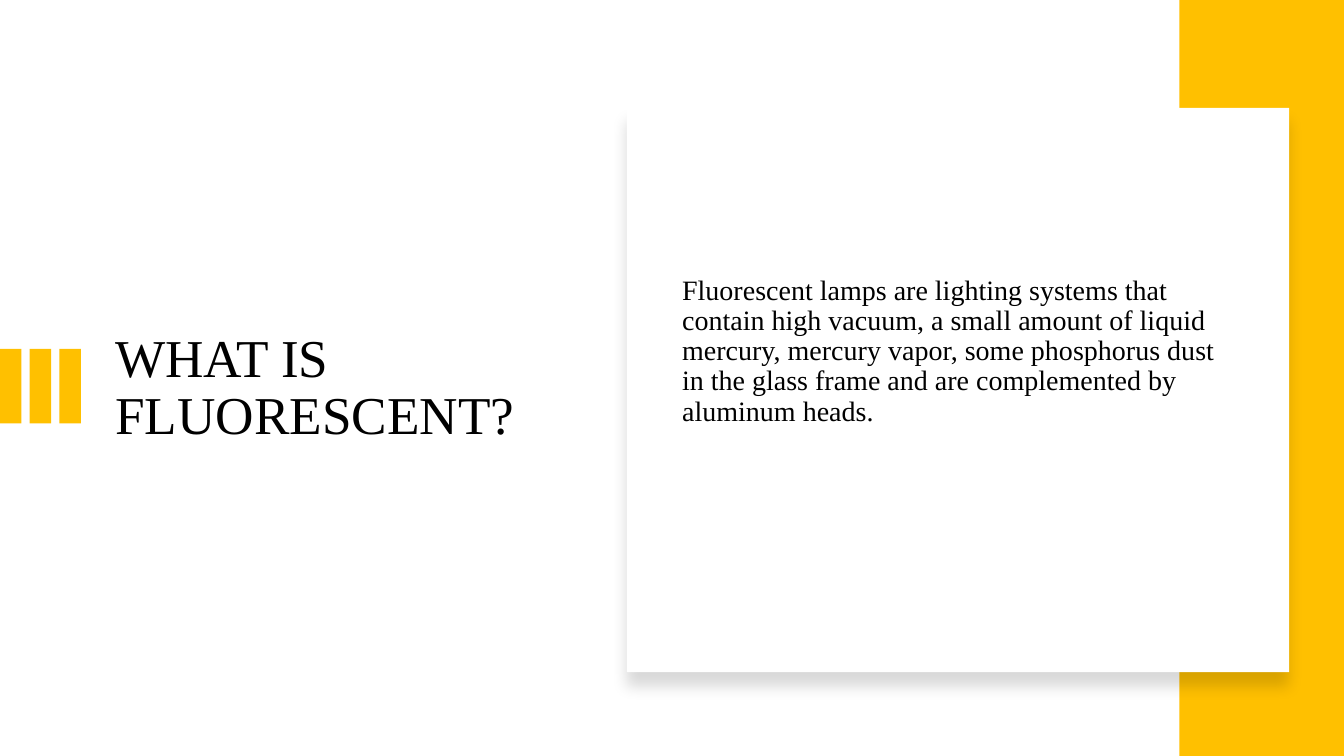
from lxml.etree import SubElement
from pptx import Presentation
from pptx.dml.color import RGBColor
from pptx.enum.shapes import MSO_SHAPE
from pptx.enum.text import MSO_ANCHOR, MSO_AUTO_SIZE, PP_ALIGN
from pptx.oxml.ns import qn
from pptx.util import Cm, Pt

SLIDE_WIDTH, SLIDE_HEIGHT = 33.87, 19.05


def color(hex_string):
    return RGBColor.from_string(hex_string)


class SlideBuilder:
    font_name = "Times New Roman"
    text_color = "000000"
    accent = "FFC000"
    paper = "FFFFFF"

    def __init__(self, slide):
        self.slide = slide

    def rectangle(self, left, top, width, height, fill, parent=None):
        shapes = (parent or self.slide).shapes
        shape = shapes.add_shape(MSO_SHAPE.RECTANGLE, Cm(left), Cm(top), Cm(width), Cm(height))
        shape.shadow.inherit = False
        shape.fill.solid()
        shape.fill.fore_color.rgb = color(fill)
        shape.line.fill.background()
        return shape

    def bars(self, top, width, height, pitch, count):
        group = self.slide.shapes.add_group_shape()
        for index in range(count):
            self.rectangle(index * pitch, top, width, height, self.accent, group)

    def card(self, left, top, width, height):
        """Draw a paper panel with a soft shadow below it."""
        shape = self.rectangle(left, top, width, height, self.paper)
        effects = shape.element.spPr.find(qn("a:effectLst"))
        shadow = SubElement(effects, qn("a:outerShdw"), blurRad=str(Pt(11)), dist=str(Pt(10)),
                            dir="5400000", algn="t", rotWithShape="0")
        shadow_color = SubElement(shadow, qn("a:srgbClr"), val="000000")
        SubElement(shadow_color, qn("a:alpha"), val="15000")

    def placeholder_text(self, shape, box, insets, text, size):
        """Fill a placeholder and bring it in front of the shapes drawn so far."""
        shape.left, shape.top, shape.width, shape.height = (Cm(length) for length in box)
        shape.element.getparent().append(shape.element)
        frame = shape.text_frame
        frame.word_wrap = True
        frame.auto_size = MSO_AUTO_SIZE.NONE
        frame.vertical_anchor = MSO_ANCHOR.MIDDLE
        (frame.margin_left, frame.margin_top,
         frame.margin_right, frame.margin_bottom) = (Cm(inset) for inset in insets)
        paragraph = frame.paragraphs[0]
        paragraph.alignment = PP_ALIGN.LEFT
        paragraph.line_spacing = 0.9
        paragraph.space_before = Pt(0)
        properties = paragraph._p.get_or_add_pPr()
        properties.set("marL", "0")
        properties.set("indent", "0")
        SubElement(properties, qn("a:buNone"))
        run = paragraph.add_run()
        run.text = text
        run.font.name = self.font_name
        run.font.size = Pt(size)
        run.font.color.rgb = color(self.text_color)


def main():
    presentation = Presentation()
    presentation.slide_width = Cm(SLIDE_WIDTH)
    presentation.slide_height = Cm(SLIDE_HEIGHT)
    slide = presentation.slides.add_slide(presentation.slide_layouts[1])
    builder = SlideBuilder(slide)

    builder.bars(top=8.79, width=0.54, height=1.88, pitch=0.75, count=3)
    band_left = 29.72
    builder.rectangle(band_left, 0, SLIDE_WIDTH - band_left, SLIDE_HEIGHT, builder.accent)
    builder.card(15.8, 2.72, 16.69, 14.22)

    builder.placeholder_text(slide.shapes.title, (2.9, 3.71, 10.82, 12.17), (0, 0, 0, 0),
                             "WHAT IS FLUORESCENT?", 38)
    builder.placeholder_text(
        slide.placeholders[1], (16.94, 3.71, 14.6, 12.17), (0.25, 0.13, 0.25, 2),
        "Fluorescent lamps are lighting systems that contain high vacuum, a small amount of "
        "liquid mercury, mercury vapor, some phosphorus dust in the glass frame and are "
        "complemented by aluminum heads.", 20)
    presentation.save("out.pptx")


if __name__ == "__main__":
    main()
